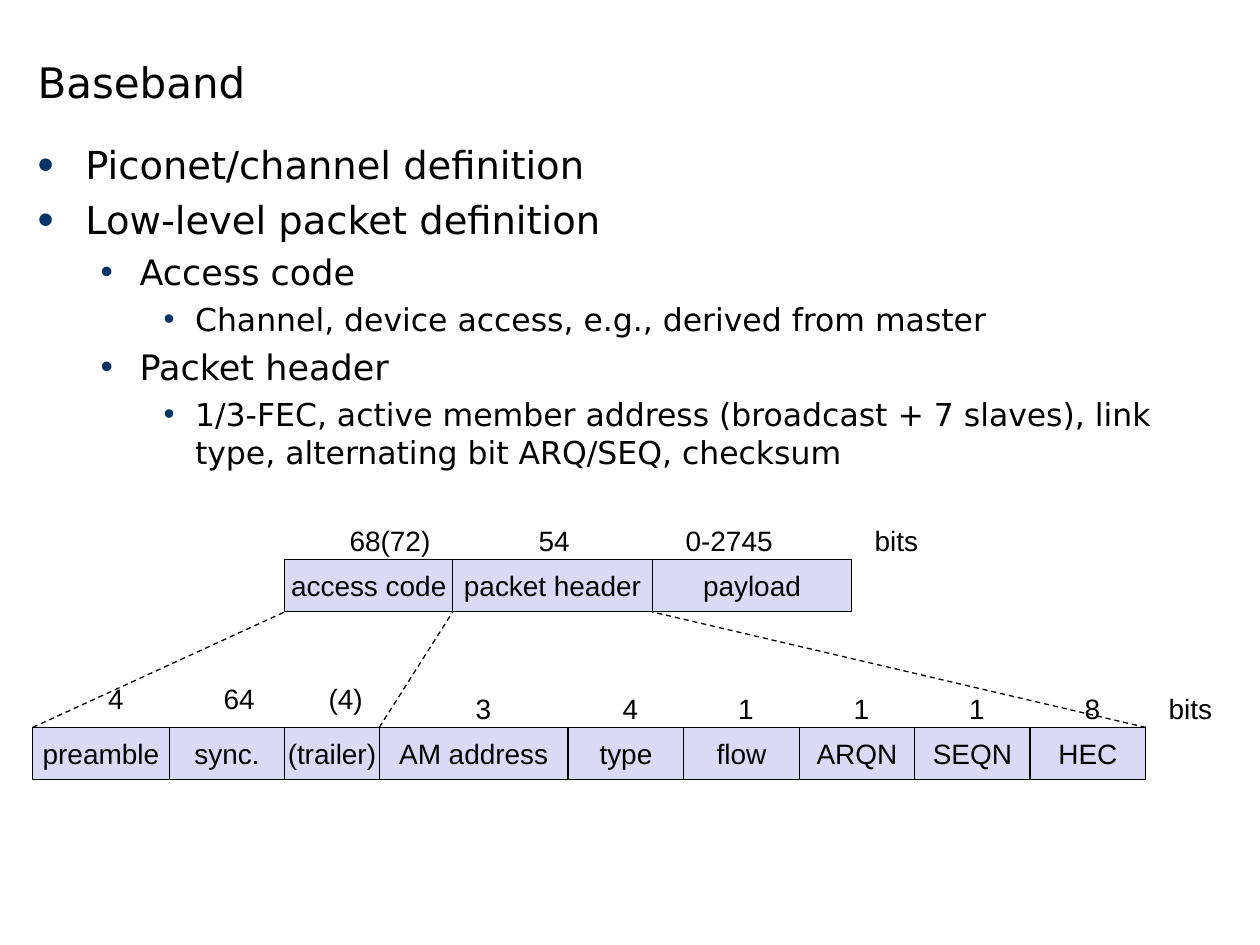
from itertools import accumulate

from lxml import etree
from pptx import Presentation
from pptx import util as u
from pptx.dml.color import RGBColor
from pptx.enum import dml, shapes, text
from pptx.oxml.ns import qn

BLACK = RGBColor(0x00, 0x00, 0x00)
NAVY = RGBColor(0x00, 0x33, 0x66)
LAVENDER = RGBColor(0xDA, 0xDA, 0xF6)

# Advance widths in inches for 16 pt labels; digits use the default
DIGIT = 0.124
NARROW = {"(": 0.074, ")": 0.074, "-": 0.074, "i": 0.049, "t": 0.062, "s": 0.111}

# Size, left margin, hanging indent and bullet percentage by outline level
LEVELS = [(22, 0.38, 0.38, 120), (20, 0.81, 0.31, 100), (18, 1.25, 0.25, 100)]


class PacketSlide:
    """Style and slide; the diagram sits on a grid of twelfths of an inch."""
    UNIT = 1 / 12
    LEFT, TOP = 0.26, 4.44
    ROW = 5
    HEAD_FONT, LABEL_FONT = "DejaVu Sans", "Arial"

    def __init__(self, prs):
        self.prs = prs
        self.s = prs.slides.add_slide(prs.slide_layouts[6])

    def x(self, col):
        return u.Inches(self.LEFT + col * self.UNIT)

    def y(self, row):
        return u.Inches(self.TOP + row * self.UNIT)

    def run(self, p, words, size, font):
        r = p.add_run()
        r.text = words
        r.font.size, r.font.name = u.Pt(size), font
        r.font.color.rgb = BLACK

    def area(self, left, top, width, height, anchor):
        """Wrapping text box, placed by shares of the slide."""
        w, h = self.prs.slide_width, self.prs.slide_height
        box = self.s.shapes.add_textbox(int(left * w), int(top * h),
                                        int(width * w), int(height * h))
        tf = box.text_frame
        tf.word_wrap, tf.vertical_anchor = True, anchor
        return tf

    def title(self, words):
        tf = self.area(0.02, 0, 0.66, 0.12, text.MSO_ANCHOR.BOTTOM)
        self.run(tf.paragraphs[0], words, 24, self.HEAD_FONT)

    def outline(self, items):
        tf = self.area(0.02, 0.143, 0.96, 0.78, text.MSO_ANCHOR.TOP)
        for i, (level, words) in enumerate(items):
            p = tf.paragraphs[0] if i == 0 else tf.add_paragraph()
            size, margin, hang, percent = LEVELS[level]
            p.level = level
            if i:
                p.space_before = u.Pt(round(size * 0.23, 1))
            self.bullet(p, margin, hang, percent)
            self.run(p, words, size, self.HEAD_FONT)

    def bullet(self, p, margin, hang, percent):
        pPr = p._p.get_or_add_pPr()
        pPr.set("marL", str(u.Inches(margin)))
        pPr.set("indent", str(-u.Inches(hang)))
        color = etree.SubElement(pPr, qn("a:buClr"))
        etree.SubElement(color, qn("a:srgbClr"), val=str(NAVY))
        etree.SubElement(pPr, qn("a:buSzPct"), val=str(percent * 1000))
        etree.SubElement(pPr, qn("a:buFont"), typeface=self.LABEL_FONT)
        etree.SubElement(pPr, qn("a:buChar"), char="•")

    def fields(self, col, row, cells):
        """Row of adjoining packet fields, given as (name, columns)."""
        starts = accumulate((w for _, w in cells), initial=col)
        for start, (name, width) in zip(starts, cells):
            sp = self.s.shapes.add_shape(
                shapes.MSO_SHAPE.RECTANGLE, self.x(start), self.y(row),
                u.Inches(width * self.UNIT), u.Inches(self.ROW * self.UNIT))
            sp.shadow.inherit = False
            sp.fill.solid()
            sp.fill.fore_color.rgb = LAVENDER
            sp.line.color.rgb, sp.line.width = BLACK, u.Pt(0.75)
            tf = sp.text_frame
            tf.word_wrap, tf.vertical_anchor = False, text.MSO_ANCHOR.MIDDLE
            p = tf.paragraphs[0]
            p.alignment = text.PP_ALIGN.CENTER
            self.run(p, name, 16, self.LABEL_FONT)

    def labels(self, row, items):
        """Bit counts on one row, given as (column, words)."""
        for col, words in items:
            width = 0.2 + sum(NARROW.get(c, DIGIT) for c in words)
            box = self.s.shapes.add_textbox(self.x(col), self.y(row),
                                            u.Inches(width), u.Inches(0.37))
            tf = box.text_frame
            tf.word_wrap = False
            tf.auto_size = text.MSO_AUTO_SIZE.SHAPE_TO_FIT_TEXT
            self.run(tf.paragraphs[0], words, 16, self.LABEL_FONT)

    def dashed(self, start, end):
        line = self.s.shapes.add_connector(
            shapes.MSO_CONNECTOR.STRAIGHT, self.x(start[0]), self.y(start[1]),
            self.x(end[0]), self.y(end[1]))
        line.line.color.rgb, line.line.width = BLACK, u.Pt(0.75)
        line.line.dash_style = dml.MSO_LINE.DASH
        etree.SubElement(line._element.spPr, qn("a:effectLst"))


def main():
    prs = Presentation()
    prs.slide_width, prs.slide_height = u.Inches(10), u.Inches(7.5)
    slide = PacketSlide(prs)

    # Heading and outline
    slide.title("Baseband")
    slide.outline([
        (0, "Piconet/channel definition"),
        (0, "Low-level packet definition"),
        (1, "Access code"),
        (2, "Channel, device access, e.g., derived from master"),
        (1, "Packet header"),
        (2, "1/3-FEC, active member address (broadcast + 7 slaves), "
            "link type, alternating bit ARQ/SEQ, checksum"),
    ])

    # Whole packet
    slide.fields(24, 0, [("access code", 16), ("packet header", 19),
                         ("payload", 19)])
    slide.labels(-4, [(29, "68(72)"), (47, "54"), (61, "0-2745"), (79, "bits")])

    # Access code and packet header in detail
    detail = 16
    slide.fields(0, detail, [
        ("preamble", 13), ("sync.", 11), ("(trailer)", 9), ("AM address", 18),
        ("type", 11), ("flow", 11), ("ARQN", 11), ("SEQN", 11), ("HEC", 11)])
    slide.labels(detail - 5, [(6, "4"), (17, "64"), (27, "(4)")])
    slide.labels(detail - 4, [(41, "3"), (55, "4"), (66, "1"), (77, "1"),
                              (88, "1"), (99, "8"), (107, "bits")])

    # Dashed lines from the detail up to the packet
    for low, high in [(0, 24), (33, 40), (106, 59)]:
        slide.dashed((low, detail), (high, slide.ROW))

    prs.save("out.pptx")


if __name__ == "__main__":
    main()
